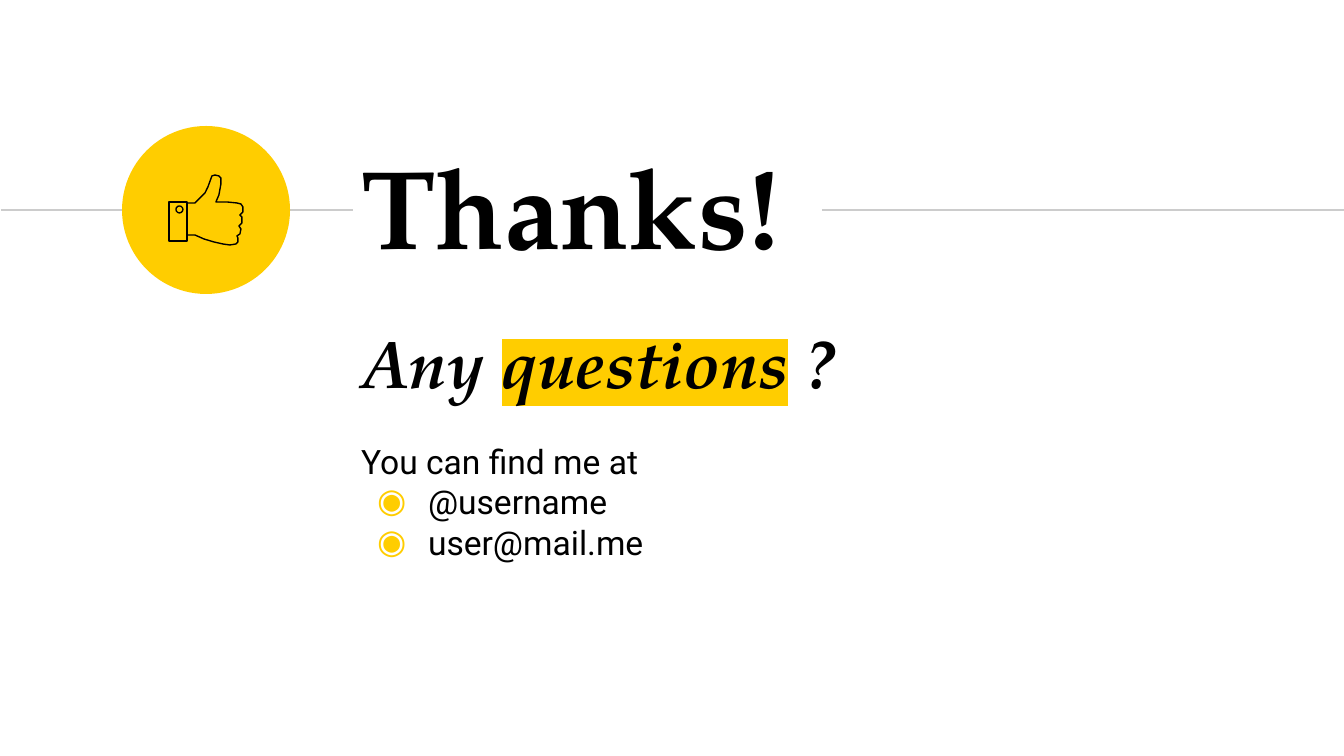
"""Build a closing slide with thanks, a question line and contact details."""
import pptx
import pptx.util
import pptx.dml.color
import pptx.enum.shapes
import pptx.enum.text
import pptx.oxml
import lxml.etree

PX = 914400 / 134.4
COLORS = {"yellow": "FFCD00", "gray": "CCCCCC", "black": "000000"}
SERIF, SANS = "TeX Gyre Pagella", "Roboto"
RULE_Y = 210
DRAWING = "{http://schemas.openxmlformats.org/drawingml/2006/main}"


def px(*values):
    return [round(value * PX) for value in values]


def add_span(para, text, font, size, bold=False, italic=False, highlight=None):
    span = para.add_run()
    span.text = text
    span.font.name = font
    span.font.size = pptx.util.Pt(size)
    span.font.bold = bold
    span.font.italic = italic
    span.font.color.rgb = pptx.dml.color.RGBColor.from_string(COLORS["black"])
    if highlight:
        mark = lxml.etree.Element(DRAWING + "highlight")
        lxml.etree.SubElement(mark, DRAWING + "srgbClr", val=COLORS[highlight])
        span.font.fill._xPr.find(DRAWING + "solidFill").addnext(mark)


deck = pptx.Presentation()
deck.slide_width, deck.slide_height = px(1344, 756)
page = deck.slides.add_slide(deck.slide_layouts[5])

title = page.shapes.title
title.left, title.top, title.width, title.height = px(348, 120, 722, 170)
box = page.shapes.add_textbox(*px(348, 308, 738, 116))
for frame, anchor in ((title.text_frame, "MIDDLE"), (box.text_frame, "TOP")):
    frame.word_wrap = True
    frame.auto_size = pptx.enum.text.MSO_AUTO_SIZE.NONE
    frame.vertical_anchor = pptx.enum.text.MSO_ANCHOR[anchor]
    frame.margin_left = frame.margin_right = frame.margin_top = frame.margin_bottom = px(13)[0]

para = title.text_frame.paragraphs[0]
para.alignment = pptx.enum.text.PP_ALIGN.LEFT
add_span(para, "Thanks!", SERIF, 60, bold=True)

para = box.text_frame.paragraphs[0]
for text, highlight in (("Any ", None), ("questions", "yellow"), (" ?", None)):
    add_span(para, text, SERIF, 36, bold=True, italic=True, highlight=highlight)

para = box.text_frame.add_paragraph()
para.space_before = pptx.util.Pt(21)
add_span(para, "You can find me at", SANS, 18)

for contact in ("@username", "user@mail.me"):
    para = box.text_frame.add_paragraph()
    add_span(para, contact, SANS, 18)
    properties = para._p.get_or_add_pPr()
    properties.set("marL", str(px(67)[0]))
    properties.set("indent", str(px(-51)[0]))
    bullet_color = lxml.etree.SubElement(properties, DRAWING + "buClr")
    lxml.etree.SubElement(bullet_color, DRAWING + "srgbClr", val=COLORS["yellow"])
    lxml.etree.SubElement(properties, DRAWING + "buFont", typeface=SANS)
    lxml.etree.SubElement(properties, DRAWING + "buChar", char="◉")

for start, end in ((1, 353), (822, 1344)):
    rule = page.shapes.add_connector(
        pptx.enum.shapes.MSO_CONNECTOR.STRAIGHT, *px(start, RULE_Y, end, RULE_Y))
    rule.line.color.rgb = pptx.dml.color.RGBColor.from_string(COLORS["gray"])
    rule.line.width = pptx.util.Pt(0.75)
    lxml.etree.SubElement(rule._element.spPr, DRAWING + "effectLst")

disc = page.shapes.add_shape(pptx.enum.shapes.MSO_SHAPE.OVAL, *px(122, 126, 168, 168))
disc.shadow.inherit = False
disc.fill.solid()
disc.fill.fore_color.rgb = pptx.dml.color.RGBColor.from_string(COLORS["yellow"])
disc.line.fill.background()

hand = [(187, 235), (195, 235), (204, 239), (214, 242), (223, 244), (230, 245), (236, 244),
        (238, 242), (238, 238), (237, 236), (240, 234), (241, 229), (239, 226), (242, 223),
        (242, 217), (240, 215), (243, 212), (243, 207), (241, 204), (237, 203), (227, 202),
        (216, 202), (219, 195), (221, 184), (221, 178), (219, 176), (215, 175), (212, 176),
        (208, 187), (205, 193), (199, 199), (195, 203), (187, 203)]
cuff = [(169, 202), (169, 241), (187, 241), (187, 202)]
icon_parts = []
for points, closed in ((cuff, True), (hand, False)):
    outline = page.shapes.build_freeform(*points[0], scale=PX)
    outline.add_line_segments(points[1:], close=closed)
    icon_parts.append(outline.convert_to_shape())
icon_parts.append(page.shapes.add_shape(
    pptx.enum.shapes.MSO_SHAPE.OVAL, *px(176, 206, 7, 7)))
for part in icon_parts:
    part.shadow.inherit = False
    part.fill.background()
    part.line.color.rgb = pptx.dml.color.RGBColor.from_string(COLORS["black"])
    part.line.width = pptx.util.Pt(0.75)

deck.save("out.pptx")
